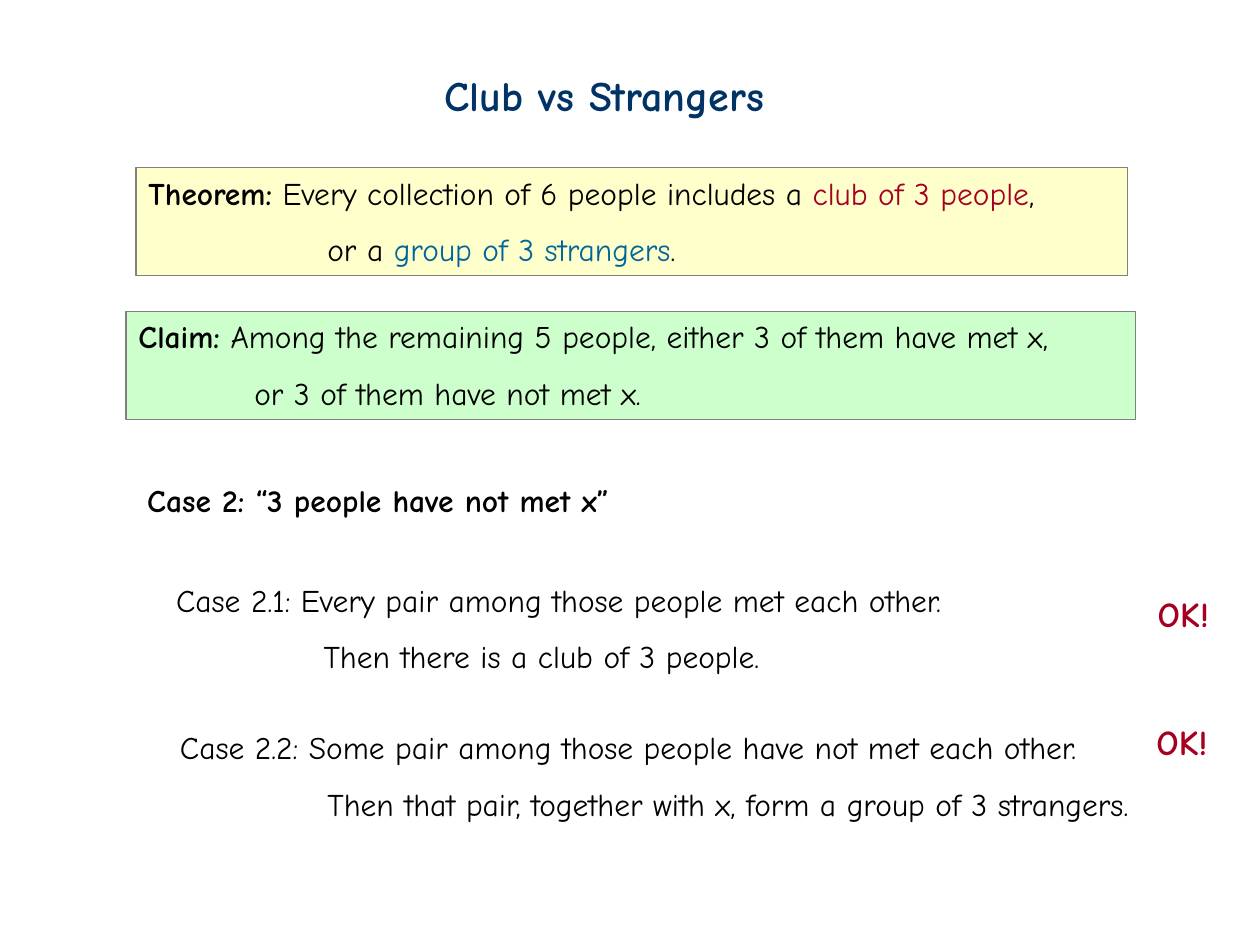
from dataclasses import dataclass

from pptx import Presentation
from pptx.dml.color import RGBColor as RGB
from pptx.enum.shapes import MSO_SHAPE as Shape
from pptx.enum.text import MSO_ANCHOR as Anchor, PP_ALIGN as Align
from pptx.util import Inches, Pt


@dataclass(frozen=True)
class Theme:
    font: str = "Comic Neue"
    title: int = 24
    body: int = 18
    mark: int = 20
    navy: str = "003366"
    black: str = "000000"
    red: str = "A50021"
    blue: str = "006699"
    gray: str = "808080"
    cream: str = "FFFFCC"
    mint: str = "CCFFCC"


T = Theme()


def put(para, text, size=T.body, color=T.black, bold=False):
    """Add one formatted run to a paragraph."""
    run = para.add_run()
    run.text = text
    font = run.font
    font.name, font.size, font.bold = T.font, Pt(size), bold
    font.color.rgb = RGB.from_string(color)


def fill_text(shape, lines, indent=0):
    """Write lines of (text, format) runs; later lines are indented and spaced."""
    frame = shape.text_frame
    frame.word_wrap = True
    frame.vertical_anchor = Anchor.TOP
    for i, runs in enumerate(lines):
        para = frame.add_paragraph() if i else frame.paragraphs[0]
        para.alignment = Align.LEFT
        if i:
            para.line_spacing = 1.5
            props = para._p.get_or_add_pPr()
            props.set("marL", str(Inches(indent)))
            props.set("indent", "0")
        for text, style in runs:
            put(para, text, **style)


def note(slide, box, lines, indent=0):
    """Plain text in a box."""
    area = slide.shapes.add_textbox(*map(Inches, box))
    fill_text(area, lines, indent)


def panel(slide, box, color, lines, indent):
    """Framed statement on a coloured ground."""
    rect = slide.shapes.add_shape(Shape.RECTANGLE, *map(Inches, box))
    rect.shadow.inherit = False
    rect.fill.solid()
    rect.fill.fore_color.rgb = RGB.from_string(color)
    rect.line.color.rgb = RGB.from_string(T.gray)
    rect.line.width = Pt(0.75)
    fill_text(rect, lines, indent)


def case(slide, box, first, then, mark):
    """Case with its conclusion and a check mark at the right."""
    note(slide, box, [[(first, {})], [(then, {})]], indent=1.17)
    note(slide, mark, [[("OK!", dict(size=T.mark, color=T.red, bold=True))]])


def main():
    deck = Presentation()
    deck.slide_width, deck.slide_height = Inches(10), Inches(7.5)
    slide = deck.slides.add_slide(deck.slide_layouts[6])
    strong = dict(bold=True)

    # Title
    note(slide, (3.43, 0.5, 3.07, 0.5),
         [[("Club vs Strangers", dict(size=T.title, color=T.navy, bold=True))]])

    # Theorem and claim
    panel(slide, (1.08, 1.33, 7.87, 0.86), T.cream, [
        [("Theorem:", strong),
         (" Every collection of 6 people includes a ", {}),
         ("club of 3 people", dict(color=T.red)), (",", {})],
        [("or a ", {}),
         ("group of 3 strangers", dict(color=T.blue)), (".", {})],
    ], indent=1.42)
    panel(slide, (1, 2.47, 8.01, 0.86), T.mint, [
        [("Claim:", strong),
         (" Among the remaining 5 people, either 3 of them have met x,", {})],
        [("or 3 of them have not met x.", {})],
    ], indent=0.92)

    # Cases
    note(slide, (1.07, 3.77, 4.41, 0.4),
         [[("Case 2: “3 people have not met x”", strong)]])
    case(slide, (1.3, 4.56, 6.74, 0.85),
         "Case 2.1: Every pair among those people met each other.",
         "Then there is a club of 3 people.",
         mark=(9.09, 4.65, 0.66, 0.43))
    case(slide, (1.33, 5.73, 8.39, 0.85),
         "Case 2.2: Some pair among those people have not met each other.",
         "Then that pair, together with x, form a group of 3 strangers.",
         mark=(9.08, 5.67, 0.66, 0.43))

    deck.save("out.pptx")


if __name__ == "__main__":
    main()
